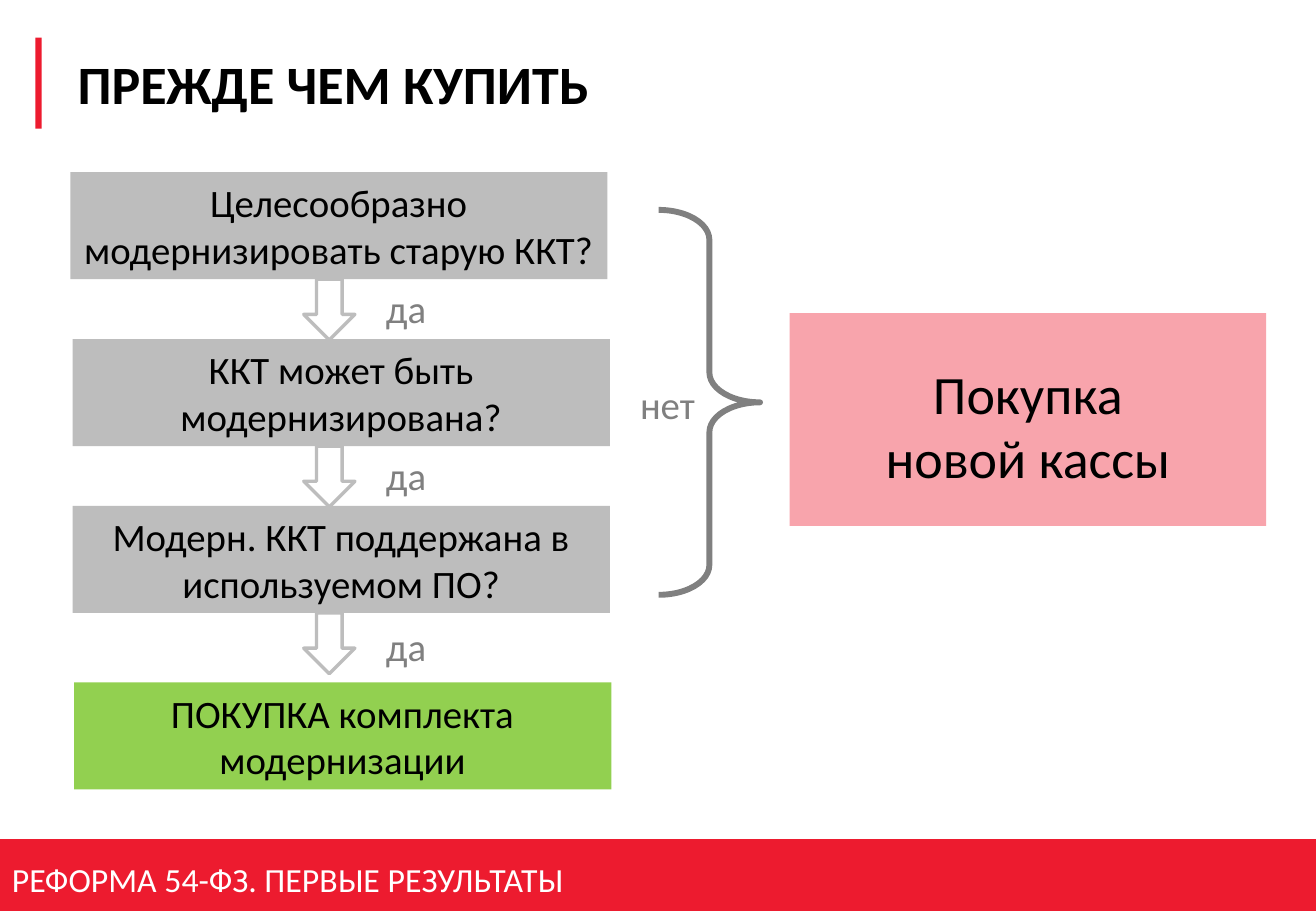
from pptx import Presentation
from pptx import util as u
from pptx.dml import color
from pptx.enum import shapes, text

Cm = u.Cm
KIND = shapes.MSO_SHAPE
HUES = {"red": "ED1B2F", "white": "FFFFFF", "black": "000000", "gray": "BDBDBD",
        "dark": "808080", "green": "92D050", "pink": "F8A4AC"}


def hue(name):
    return color.RGBColor.from_string(HUES[name])


def write(shape, words, size=23, ink="black", bold=False, align="LEFT",
          anchor="TOP", wrap=True):
    """Fill a shape with text, one paragraph per line."""
    frame = shape.text_frame
    frame.text = words
    frame.word_wrap = wrap
    frame.auto_size = text.MSO_AUTO_SIZE.NONE
    frame.vertical_anchor = getattr(text.MSO_ANCHOR, anchor)
    for para in frame.paragraphs:
        para.alignment = getattr(text.PP_ALIGN, align)
        font = para.font
        font.name, font.size, font.bold = "Calibri", u.Pt(size), bold
        font.color.rgb = hue(ink)
    return frame


def draw(slide, kind, box, fill=None, line=None, width=2):
    """Add a preset shape; box is left, top, width, height in cm."""
    shape = slide.shapes.add_shape(kind, *map(Cm, box))
    shape.shadow.inherit = False
    if fill:
        shape.fill.solid()
        shape.fill.fore_color.rgb = hue(fill)
    else:
        shape.fill.background()
    if line:
        shape.line.color.rgb = hue(line)
        shape.line.width = u.Pt(width)
    else:
        shape.line.fill.background()
    return shape


def label(slide, box, words, **form):
    return write(slide.shapes.add_textbox(*map(Cm, box)), words, **form)


def header(slide, box):
    left, top, wide, high = box
    draw(slide, KIND.RECTANGLE, (left, top, 0.13, high), "red")
    title = slide.shapes.title
    title.left, title.top, title.width, title.height = map(
        Cm, (left + 0.63, top, wide - 0.63, high))
    write(title, "ПРЕЖДЕ ЧЕМ КУПИТЬ", size=32, bold=True, anchor="MIDDLE")


def footer(slide, box):
    left, top, wide, high = box
    draw(slide, KIND.RECTANGLE, box, "red")
    label(slide, (left, top + 0.28, 12.14, 1.12),
          "РЕФОРМА 54-ФЗ. ПЕРВЫЕ РЕЗУЛЬТАТЫ", size=20, ink="white", wrap=False)


def steps(slide, box):
    """Column of questions, each followed by a "yes" arrow."""
    left, top, wide, high = box
    tall, pitch = 2.24, 3.49
    # Wording, fill, and small shifts right and down
    items = [("Целесообразно модернизировать старую ККТ?", "gray", 0, 0),
             ("ККТ может быть модернизирована?", "gray", 0.05, 0),
             ("Модерн. ККТ поддержана в используемом ПО?", "gray", 0.05, 0),
             ("ПОКУПКА комплекта модернизации", "green", 0.08,
              high - tall - 3 * pitch)]
    for i, (words, fill, right, down) in enumerate(items):
        y = top + i * pitch
        card = draw(slide, KIND.RECTANGLE,
                    (left + right, y + down, wide, tall), fill)
        write(card, words, align="CENTER", anchor="MIDDLE")
        if i < len(items) - 1:
            draw(slide, KIND.DOWN_ARROW, (left + 4.88, y + tall, 1.07, 1.27),
                 "white", "gray")
            drop = 0.08 if i == 2 else 0
            label(slide, (left + 6.35, y + tall + drop, 2.33, 1.27), "да",
                  ink="dark")


def result(slide, box):
    """Brace with "no" leading to the purchase box."""
    left, top, wide, high = box
    brace = draw(slide, KIND.RIGHT_BRACE, (left + 0.64, top, 2.12, high),
                 line="dark", width=3.5)
    brace.adjustments[0] = 0.295
    label(slide, (left, top + 3.45, 2.33, 1.27), "нет", ink="dark")
    card = draw(slide, KIND.RECTANGLE,
                (left + 3.38, top + 2.16, wide - 3.38, 4.45), "pink")
    frame = write(card, "Покупка\nновой кассы", size=32, align="CENTER",
                  anchor="MIDDLE")
    frame.margin_top = Cm(0.35)


def main():
    deck = Presentation()
    deck.slide_width, deck.slide_height = Cm(27.51), Cm(19.05)
    slide = deck.slides.add_slide(deck.slide_layouts[5])
    footer(slide, (0, 17.55, 27.51, 1.5))
    header(slide, (0.74, 0.79, 21.03, 1.9))
    steps(slide, (1.47, 3.6, 11.23, 12.91))
    result(slide, (13.13, 4.39, 13.34, 8.05))
    deck.save("out.pptx")


if __name__ == "__main__":
    main()
